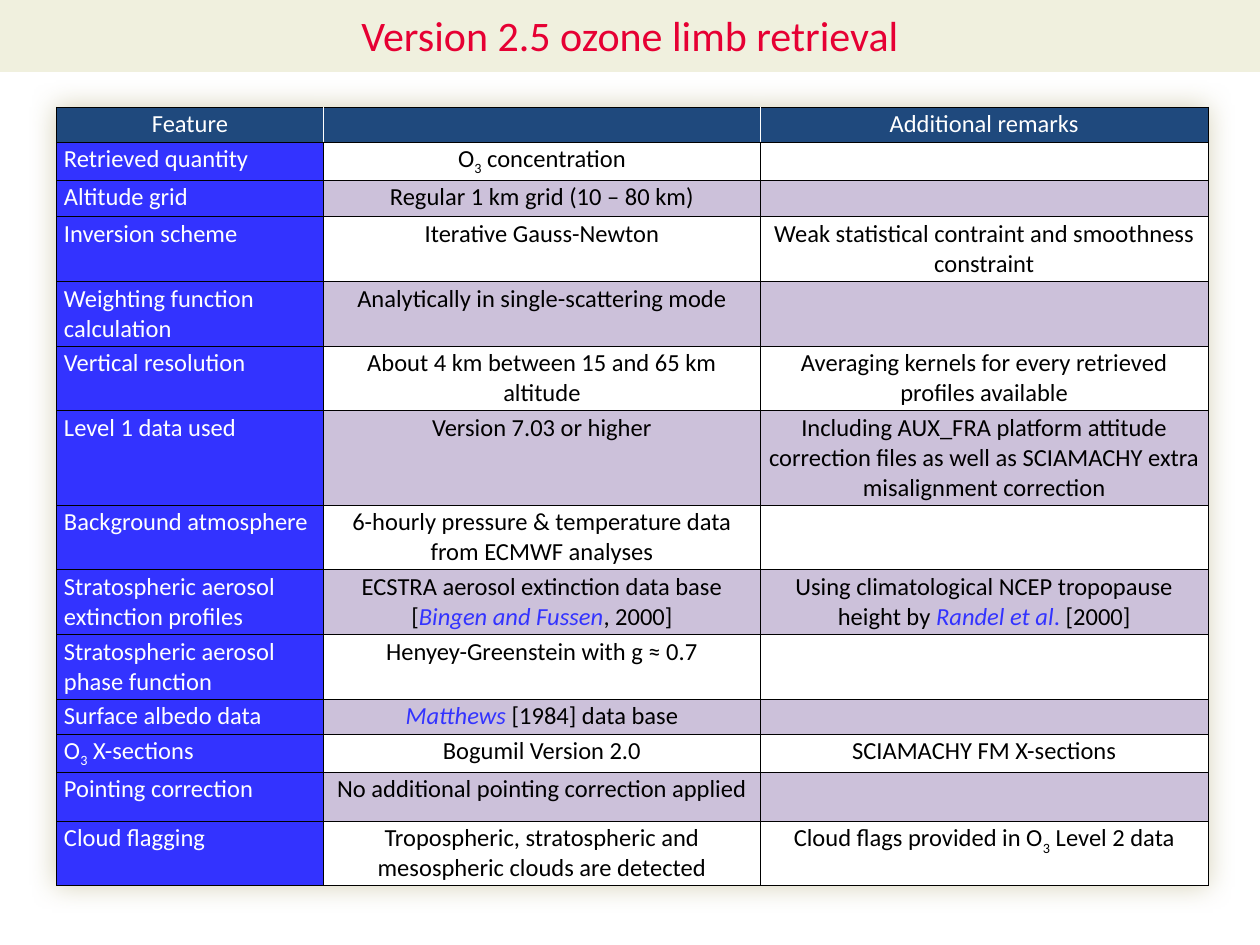
import pptx
import pptx.util
import pptx.dml.color
import pptx.enum.text
import pptx.oxml
import pptx.oxml.ns
import lxml.etree

Cm, Pt = pptx.util.Cm, pptx.util.Pt
ALIGN = pptx.enum.text.PP_ALIGN
BLUE, WHITE, BLACK = "3333FF", "FFFFFF", "000000"
NAVY, LILAC = "1F497D", "CCC1DA"

# Content: a cell is a string or a list of runs; a run may carry its format
SUB = ("3", {"sub": True})
CITE = {"color": BLUE, "italic": True}
TITLE = "Version 2.5 ozone limb retrieval"
ROWS = [
    ("Feature", "", "Additional remarks"),
    ("Retrieved quantity", ["O", SUB, " concentration"], ""),
    ("Altitude grid", "Regular 1 km grid (10 – 80 km)", ""),
    ("Inversion scheme", "Iterative Gauss-Newton",
     "Weak statistical contraint and smoothness constraint"),
    ("Weighting function calculation",
     "Analytically in single-scattering mode", ""),
    ("Vertical resolution", "About 4 km between 15 and 65 km altitude",
     "Averaging kernels for every retrieved profiles available"),
    ("Level 1 data used", "Version 7.03 or higher",
     "Including AUX_FRA platform attitude correction files as well as "
     "SCIAMACHY extra misalignment correction"),
    ("Background atmosphere",
     "6-hourly pressure & temperature data from ECMWF analyses", ""),
    ("Stratospheric aerosol extinction profiles",
     ["ECSTRA aerosol extinction data base [",
      ("Bingen and Fussen", CITE), ", 2000]"],
     ["Using climatological NCEP tropopause height by ",
      ("Randel et al", CITE), (".", {"color": BLUE}), " [2000]"]),
    ("Stratospheric aerosol phase function",
     "Henyey-Greenstein with g ≈ 0.7", ""),
    ("Surface albedo data", [("Matthews", CITE), " [1984] data base"], ""),
    (["O", SUB, " X-sections"], "Bogumil Version 2.0",
     "SCIAMACHY FM X-sections"),
    ("Pointing correction", "No additional pointing correction applied", ""),
    ("Cloud flagging",
     "Tropospheric, stratospheric and mesospheric clouds are detected",
     ["Cloud flags provided in O", SUB, " Level 2 data"]),
]
WIDTHS = [5.38, 8.81, 9.02]
HEIGHTS = [0.66, 0.74, 0.74, 1.12, 1.3, 1.24, 1.88,
           1.19, 0.99, 0.99, 0.56, 0.69, 0.99, 0.99]


def rgb(code):
    return pptx.dml.color.RGBColor.from_string(code)


def paint(item, code):
    item.fill.solid()
    item.fill.fore_color.rgb = rgb(code)


def write(frame, runs, size=14, color=BLACK, align=ALIGN.CENTER):
    """Fill a text frame with one paragraph of formatted runs."""
    para = frame.paragraphs[0]
    para.alignment = align
    para.font.size = Pt(size)
    for part in [runs] if isinstance(runs, str) else runs:
        words, form = (part, {}) if isinstance(part, str) else part
        if not words:
            continue
        run = para.add_run()
        run.text = words
        font = run.font
        font.name, font.size, font.bold = "Calibri", Pt(size), False
        font.italic = form.get("italic", False)
        font.color.rgb = rgb(form.get("color", color))
        if form.get("sub"):
            run._r.get_or_add_rPr().set("baseline", "-25000")


def edge(cell, side, code, width):
    """Draw one border; borders must come before the fill."""
    line = pptx.oxml.parse_xml(
        f'<a:{side} {pptx.oxml.ns.nsdecls("a")} w="{int(Pt(width))}">'
        f'<a:solidFill><a:srgbClr val="{code}"/></a:solidFill></a:{side}>')
    cell._tc.get_or_add_tcPr().append(line)


def main():
    deck = pptx.Presentation()
    deck.slide_width, deck.slide_height = Cm(25.4), Cm(19.05)
    slide = deck.slides.add_slide(deck.slide_layouts[5])

    # Title band
    title = slide.shapes.title
    title.left, title.top = Cm(0), Cm(-0.05)
    title.width, title.height = Cm(25.4), Cm(1.5)
    paint(title, "F0F0DE")
    title.text_frame.vertical_anchor = pptx.enum.text.MSO_ANCHOR.MIDDLE
    write(title.text_frame, TITLE, size=24, color="E60033")

    # Table grid
    table = slide.shapes.add_table(
        len(ROWS), len(WIDTHS), Cm(1.14), Cm(2.16),
        Cm(sum(WIDTHS)), Cm(sum(HEIGHTS))).table
    for col, width in zip(table.columns, WIDTHS):
        col.width = Cm(width)
    for row, height in zip(table.rows, HEIGHTS):
        row.height = Cm(height)

    # Soft shadow around the table
    table._tbl.tblPr.insert(0, pptx.oxml.parse_xml(
        f'<a:effectLst {pptx.oxml.ns.nsdecls("a")}>'
        '<a:outerShdw blurRad="190500" dist="0" algn="ctr" rotWithShape="0">'
        '<a:srgbClr val="C4BD97"><a:alpha val="70000"/></a:srgbClr>'
        '</a:outerShdw></a:effectLst>'))

    # Cells
    last = len(WIDTHS) - 1
    for r, row in enumerate(ROWS):
        for c, runs in enumerate(row):
            cell = table.cell(r, c)
            cell.margin_left = cell.margin_right = Cm(0.15)
            cell.margin_top = cell.margin_bottom = Cm(0.05)
            inner = {"lnL": r == 0 and c > 0, "lnR": r == 0 and c < last,
                     "lnT": False, "lnB": False}
            for side, pale in inner.items():
                edge(cell, side, *((WHITE, 0.25) if pale else (BLACK, 0.5)))
            band = WHITE if r % 2 else LILAC
            paint(cell, NAVY if r == 0 else BLUE if c == 0 else band)
            write(cell.text_frame, runs,
                  color=WHITE if r == 0 or c == 0 else BLACK,
                  align=ALIGN.LEFT if r and c == 0 else ALIGN.CENTER)
            if not runs:
                # Keep empty cells from stretching their row
                end = lxml.etree.SubElement(
                    cell.text_frame.paragraphs[0]._p,
                    pptx.oxml.ns.qn("a:endParaRPr"))
                end.set("sz", "1400")

    deck.save("out.pptx")


if __name__ == "__main__":
    main()
